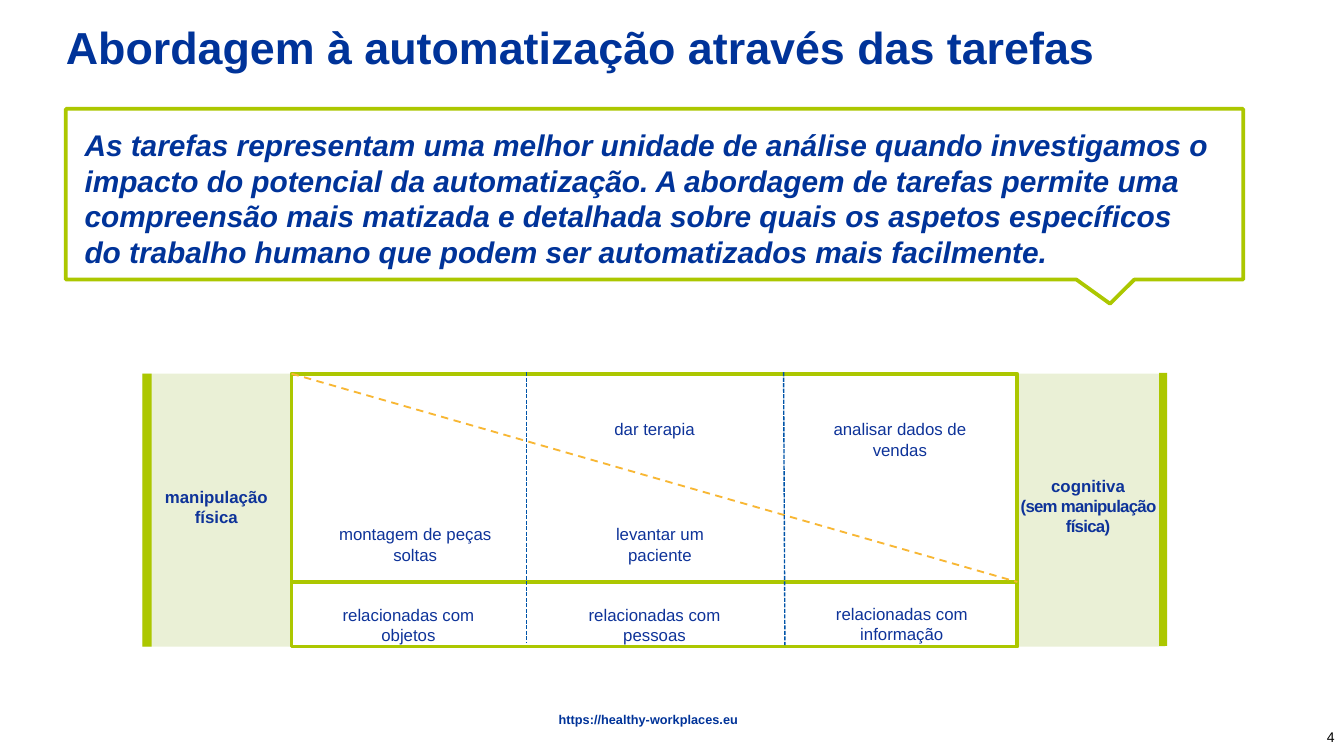
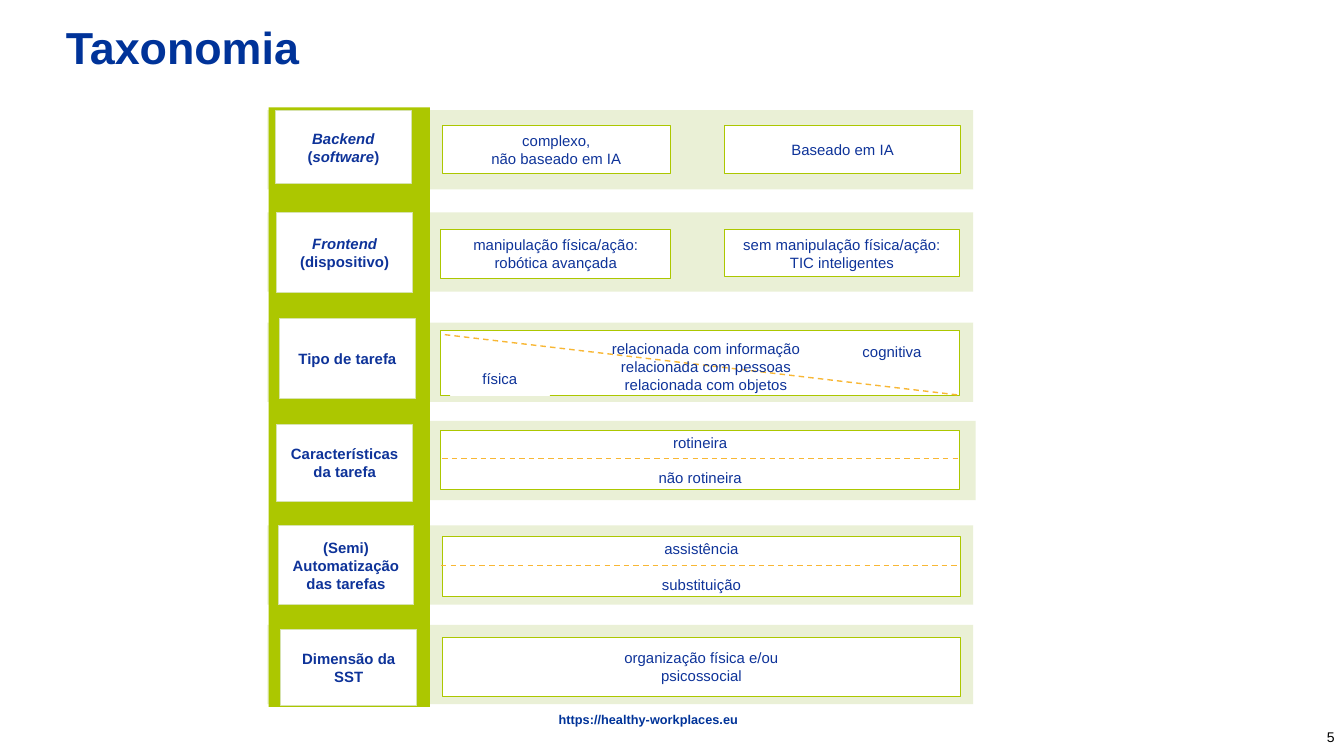
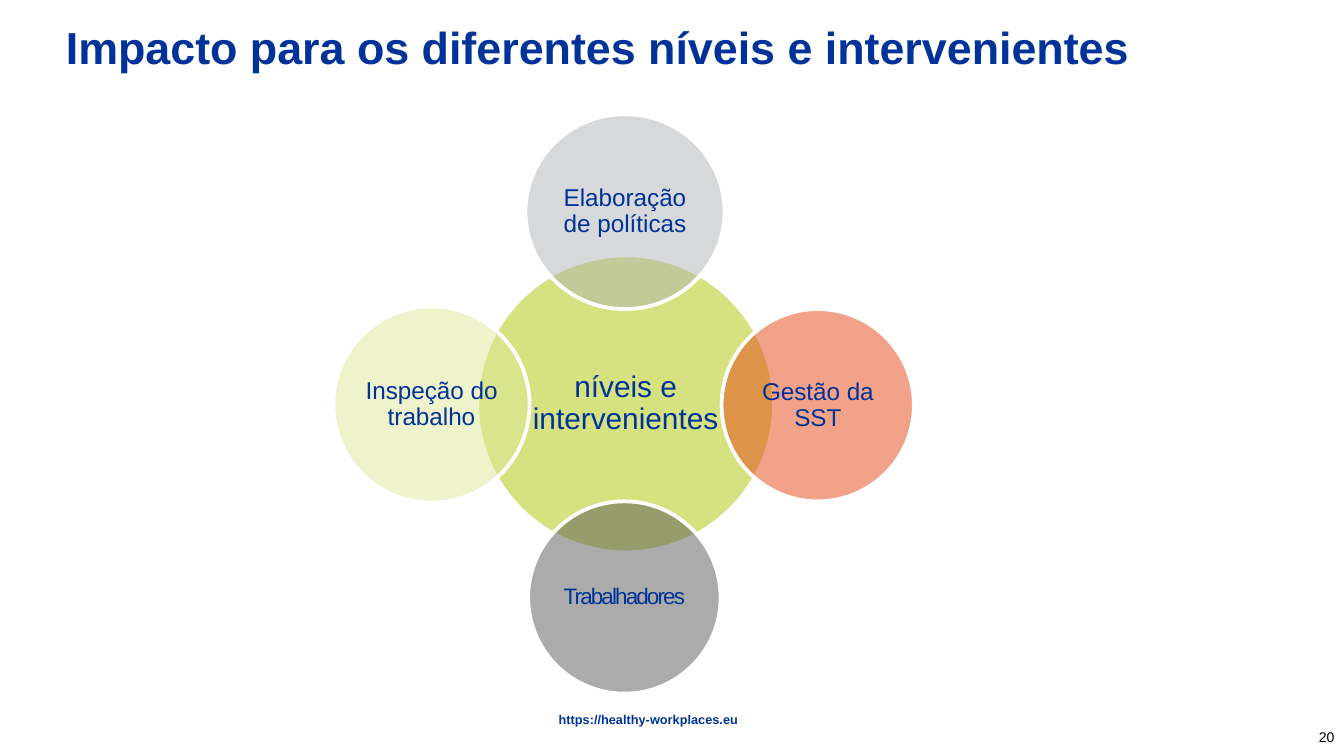
from dataclasses import dataclass

from lxml import etree
from pptx import Presentation
from pptx.dml import color
from pptx.enum import dml, shapes, text
from pptx.oxml import ns
from pptx.util import Pt

ALIGN = text.PP_ALIGN
ANCHOR = text.MSO_ANCHOR
DASH = dml.MSO_LINE


@dataclass(frozen=True)
class Theme:
    font: str = "Arial"
    blue: str = "003399"
    ink: str = "0E3399"
    divider: str = "0054A8"
    green: str = "ACC700"
    pale: str = "D7E3AF"
    amber: str = "F8B734"
    white: str = "FFFFFF"
    black: str = "000000"
    title: float = 24
    quote: float = 16
    hub: float = 16
    circle: float = 13
    matrix: float = 9
    taxonomy: float = 8
    page: float = 7.5
    footer: float = 6.8


T = Theme()
INSETS = (7.2, 3.6, 7.2, 3.6)
NO_INSETS = (0, 0, 0, 0)


def rgb(value):
    return color.RGBColor.from_string(value)


def apply(obj, values):
    for name, value in values.items():
        setattr(obj, name, value)


def add_run(p, content, size, ink, **style):
    spacing = style.pop("spacing", None)
    for i, line in enumerate(content.split("\n")):
        if i:
            p.add_line_break()
        if not line:
            continue
        r = p.add_run()
        r.text = line
        apply(r.font, {"name": T.font, "size": Pt(size), **style})
        r.font.color.rgb = rgb(ink)
        if spacing:
            r._r.get_or_add_rPr().set("spc", str(round(spacing * 100)))


def write(sp, paragraphs, size, ink=T.ink, align=ALIGN.CENTER, anchor=ANCHOR.TOP,
          insets=INSETS, grow=False, leading=None, gap=0, **style):
    tf = sp.text_frame
    sides = ("margin_left", "margin_top", "margin_right", "margin_bottom")
    fit = text.MSO_AUTO_SIZE
    apply(tf, {
        "word_wrap": True,
        "vertical_anchor": anchor,
        "auto_size": fit.SHAPE_TO_FIT_TEXT if grow else fit.NONE,
        **{side: Pt(inset) for side, inset in zip(sides, insets)},
    })
    for i, runs in enumerate(paragraphs):
        p = tf.add_paragraph() if i else tf.paragraphs[0]
        p.alignment = align
        if leading:
            p.line_spacing = leading
        if i and gap:
            p.space_before = Pt(gap)
        for run in [runs] if isinstance(runs, str) else runs:
            content, extra = (run, {}) if isinstance(run, str) else run
            add_run(p, content, size, ink, **{**style, **extra})


def paint(sp, fill=None, line=None, width=0.5, alpha=None):
    sp.shadow.inherit = False
    if fill:
        sp.fill.solid()
        sp.fill.fore_color.rgb = rgb(fill)
        if alpha:
            clr = sp._element.spPr.find(".//" + ns.qn("a:srgbClr"))
            etree.SubElement(clr, ns.qn("a:alpha")).set("val", str(alpha * 1000))
    else:
        sp.fill.background()
    if line:
        sp.line.color.rgb = rgb(line)
        sp.line.width = Pt(width)
    else:
        sp.line.fill.background()


def add_box(s, at, fill=T.white, line=None, width=0.5, alpha=None,
            kind=shapes.MSO_SHAPE.RECTANGLE):
    sp = s.shapes.add_shape(kind, *map(Pt, at))
    paint(sp, fill, line, width, alpha)
    return sp


def add_text(s, at, paragraphs, size, **options):
    write(s.shapes.add_textbox(*map(Pt, at)), paragraphs, size, **options)


def add_line(s, ends, ink, width, dash):
    line = s.shapes.add_connector(shapes.MSO_CONNECTOR.STRAIGHT, *map(Pt, ends))
    line.line.color.rgb = rgb(ink)
    apply(line.line, {"width": Pt(width), "dash_style": dash})
    etree.SubElement(line._element.spPr, ns.qn("a:effectLst"))


def add_outline(s, points, ink, width):
    start, *rest = [tuple(map(Pt, point)) for point in points]
    builder = s.shapes.build_freeform(*start)
    builder.add_line_segments(rest, close=True)
    paint(builder.convert_to_shape(), line=ink, width=width)


def add_slide(prs, title, number):
    s = prs.slides.add_slide(prs.slide_layouts[5])
    sp = s.shapes.title
    apply(sp, dict(zip(("left", "top", "width", "height"), map(Pt, (35.3, 10.8, 595.5, 28.8)))))
    write(sp, [title], T.title, ink=T.blue, align=ALIGN.LEFT, anchor=ANCHOR.MIDDLE,
          insets=(0, 3.6, 7.2, 3.6), bold=True)
    add_text(s, (671.8, 383.8, 48.2, 21.6), [number], T.page, ink=T.black,
             align=ALIGN.RIGHT, anchor=ANCHOR.MIDDLE, insets=(5, 2.9, 5, 2.9))
    add_text(s, (109.4, 382.3, 475.9, 6.5), ["https://healthy-workplaces.eu"], T.footer,
             ink=T.blue, insets=NO_INSETS, leading=0.9, bold=True)
    return s


def build_tasks(prs):
    s = add_slide(prs, "Abordagem à automatização através das tarefas", "4")
    add_box(s, (76.3, 200.2, 547.9, 146.2), T.pale, alpha=50)
    add_box(s, (621, 199.8, 4.3, 146.2), T.green)
    add_box(s, (76.3, 200.2, 5, 146.2), T.green)
    for top, height in ((200.2, 113.8), (311.8, 34.6)):
        add_box(s, (156.2, top, 388.8, height), line=T.green, width=2)
    add_line(s, (156.2, 200.2, 545, 311.8), T.amber, 1, DASH.DASH)

    physical = ["manipulação física"]
    cognitive = ["cognitiva", [("(sem manipulação física)", {"spacing": -0.4})]]
    for at, side in (((76.3, 257, 79.2, 31.7), physical),
                     ((535, 251.3, 95.8, 40.3), cognitive)):
        add_text(s, at, side, T.matrix, grow=True, bold=True)

    for left, top, width, task in (
            (174.2, 277.2, 96.5, "montagem de peças soltas"),
            (439.2, 221, 85.7, "analisar dados de vendas"),
            (302.4, 221, 96.5, "dar terapia"),
            (305.3, 277.2, 96.5, "levantar um paciente"),
            (170.6, 320.4, 96.5, "relacionadas com objetos"),
            (302.4, 320.4, 96.5, "relacionadas com pessoas"),
            (433.4, 319.7, 99.4, "relacionadas com informação")):
        add_text(s, (left, top, width, 20.2), [task], T.matrix, grow=True)
    for ends in ((282.2, 199.4, 282.2, 344.2), (419.8, 199.4, 420.5, 345.6)):
        add_line(s, ends, T.divider, 0.75, DASH.SQUARE_DOT)

    add_text(s, (41, 67.7, 610.6, 77.8), [
        "As tarefas representam uma melhor unidade de análise quando investigamos o "
        "impacto do potencial da automatização. A abordagem de tarefas permite uma "
        "compreensão mais matizada e detalhada sobre quais os aspetos específicos do "
        "trabalho humano que podem ser automatizados mais facilmente."],
        T.quote, ink=T.blue, align=ALIGN.LEFT, insets=(4.3, 0, 0, 0), grow=True,
        bold=True, italic=True)
    left, top, right, bottom = 35.3, 58.3, 666, 149.8
    add_outline(s, [(left, top), (right, top), (right, bottom), (607.7, bottom),
                    (594.7, 162.7), (576.7, bottom), (left, bottom)], T.green, 2)


def build_taxonomy(prs):
    s = add_slide(prs, "Taxonomia", "5")
    italic = {"italic": True}
    rows = (
        (143.3, 59, 147.6, 59, 39.6,
         [("Backend\n", italic), "(", ("software", italic), ")"]),
        (143.3, 113.8, 148.3, 113.8, 43.2, [("Frontend\n", italic), "(dispositivo)"]),
        (143.3, 172.8, 149.8, 170.6, 43.2, "Tipo de tarefa"),
        (144.7, 225.4, 148.3, 227.5, 41, "Características da tarefa"),
        (143.3, 281.5, 149, 281.5, 42.5, "(Semi) Automatização das tarefas"),
        (143.3, 334.8, 150.5, 337, 41, "Dimensão da SST"),
    )
    for left, top, *_ in rows:
        add_box(s, (left, top, 378, 42.5), T.pale, alpha=50)
    add_box(s, (144, 57.6, 86.4, 321.1), T.green)
    for _, _, left, top, height, label in rows:
        sp = add_box(s, (left, top, 72.7, height), line=T.pale)
        write(sp, [label], T.taxonomy, anchor=ANCHOR.MIDDLE, bold=True)

    tight = {"insets": (0, 3.6, 0, 3.6)}
    split = {"gap": 9.2}
    for at, options, paragraphs in (
            ((236.9, 67, 122.4, 25.9), {}, ["complexo,\nnão baseado em IA"]),
            ((388.1, 67, 126.7, 25.9), {}, ["Baseado em IA"]),
            ((236.2, 123.1, 123.1, 25.9), {},
             ["manipulação física/ação:", "robótica avançada"]),
            ((388.1, 123.1, 126, 25.2), tight,
             ["sem manipulação física/ação:", "TIC inteligentes"]),
            ((236.2, 177.1, 277.9, 34.6), {}, []),
            ((236.2, 230.4, 277.9, 31.7), split, ["rotineira", "não rotineira"]),
            ((236.9, 287.3, 277.9, 32.4), split, ["assistência", "substituição"]),
            ((236.9, 341.3, 277.9, 31.7), {}, ["organização física e/ou\npsicossocial"])):
        sp = add_box(s, at, line=T.green)
        write(sp, paragraphs, T.taxonomy, anchor=ANCHOR.MIDDLE, **options)

    for ends in ((238.3, 179.3, 514.1, 211.7), (236.9, 245.5, 514.8, 245.5),
                 (236.2, 303.1, 514.1, 303.1)):
        add_line(s, ends, T.amber, 0.75, DASH.DASH)
    add_text(s, (318.2, 178.6, 120.2, 36),
             ["relacionada com informação\nrelacionada com pessoas\nrelacionada com objetos"],
             T.taxonomy, grow=True)
    for left, top, line, align, pole in (
            (241.2, 194.4, T.white, ALIGN.CENTER, "física"),
            (455, 180, None, ALIGN.LEFT, "cognitiva")):
        sp = add_box(s, (left, top, 53.3, 17.3), line=line)
        write(sp, [pole], T.taxonomy, align=align, grow=True)


def add_circle(s, at, fill, label, size, **style):
    add_box(s, at, fill, T.white, 2, 50, shapes.MSO_SHAPE.OVAL)
    left, top, width, height = at
    inset = (1 - 0.5 ** 0.5) / 2
    inner = (left + width * inset, top + height * inset,
             width * (1 - 2 * inset), height * (1 - 2 * inset))
    add_text(s, inner, [label], size, ink=T.blue, anchor=ANCHOR.MIDDLE,
             insets=(1.4,) * 4, leading=0.9, **style)


def build_levels(prs):
    s = add_slide(prs, "Impacto para os diferentes níveis e intervenientes", "20")
    add_circle(s, (255.6, 136.8, 159.1, 159.1), T.green, "níveis e intervenientes", T.hub)
    add_circle(s, (281.5, 61.2, 106.6, 104.4), "B1B3B4", "Elaboração\nde políticas", T.circle)
    add_circle(s, (386.6, 165.6, 103, 103), "E64715", "Gestão da SST", T.circle)
    add_circle(s, (283, 268.6, 103, 103), "58585A", "Trabalhadores", T.circle - 1, spacing=-1)
    add_circle(s, (178.6, 164.2, 105.1, 105.1), "DEE999", "Inspeção do trabalho", T.circle)


def main():
    prs = Presentation()
    apply(prs, {"slide_width": Pt(720), "slide_height": Pt(405)})
    build_tasks(prs)
    build_taxonomy(prs)
    build_levels(prs)
    prs.save("out.pptx")


if __name__ == "__main__":
    main()
